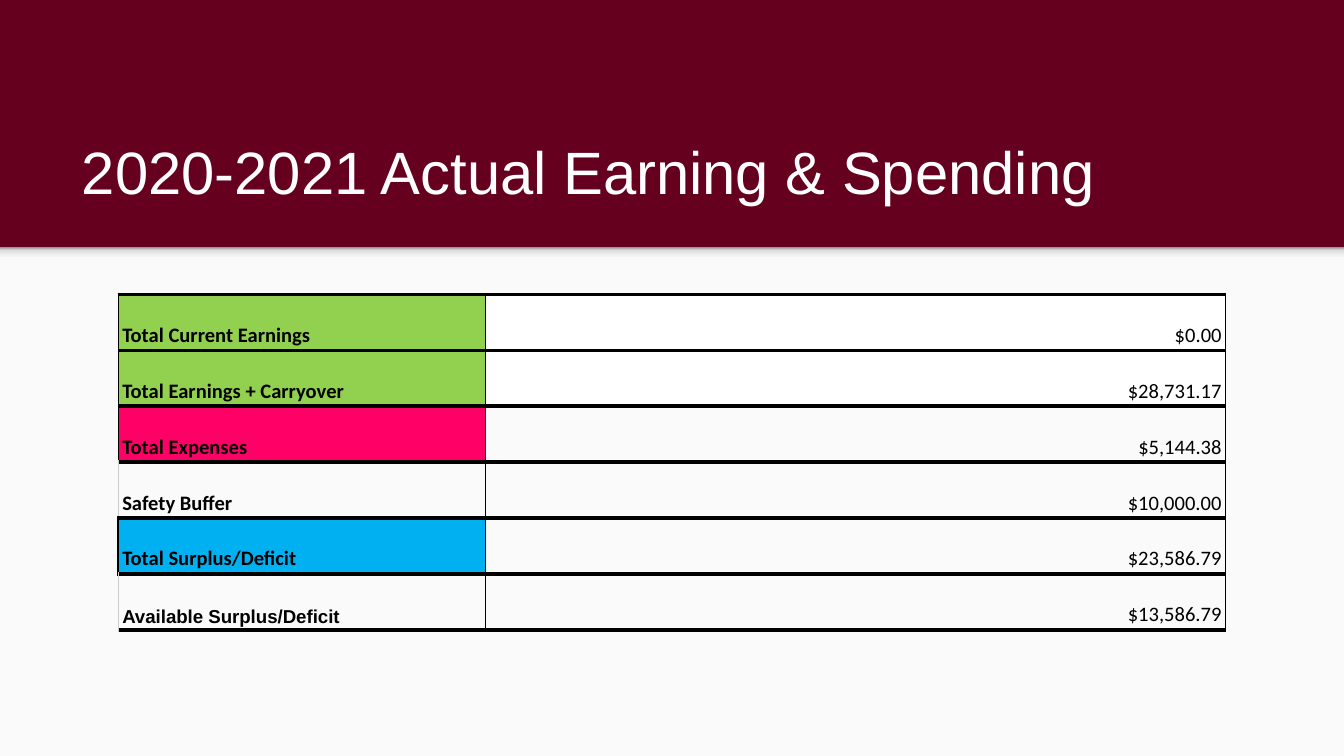
from dataclasses import dataclass

from lxml import etree
from pptx import Presentation
from pptx.dml.color import RGBColor
from pptx.enum.shapes import MSO_SHAPE
from pptx.enum.text import MSO_ANCHOR, MSO_AUTO_SIZE, PP_ALIGN
from pptx.oxml.ns import qn
from pptx.util import Inches, Pt

RECT = MSO_SHAPE.RECTANGLE
BOTTOM = MSO_ANCHOR.BOTTOM
LEFT, RIGHT = PP_ALIGN.LEFT, PP_ALIGN.RIGHT
NO_AUTOFIT = MSO_AUTO_SIZE.NONE
TITLE_ONLY = 5


@dataclass(frozen=True)
class Theme:
    maroon: str = "66001F"
    panel: str = "FAFAFA"
    white: str = "FFFFFF"
    black: str = "000000"
    grey: str = "CCCCCC"
    green: str = "92D050"
    pink: str = "FF0066"
    blue: str = "00B0F0"
    shade: tuple = ((0, "F9F9F9"), (36, "F9F9F9"), (80, "DEDEDE"), (100, "999999"))
    heading_font: str = "Arial"
    table_font: str = "Calibri"
    title_size: float = 32
    table_size: float = 11
    small_size: float = 10


THEME = Theme()
SLIDE_WIDTH = 10
SLIDE_HEIGHT = SLIDE_WIDTH * 9 / 16
PANEL_TOP = 1.84
COL_WIDTHS = (2.73, 5.51)
TABLE_HEIGHT = 2.5
THIN, MEDIUM, THICK = 0.75, 1.5, 2.25

# label, amount, label fill, amount fill, left border (colour, width)
ROWS = (
    ("Total Current Earnings", "$0.00", THEME.green, THEME.white, (THEME.black, THIN)),
    ("Total Earnings + Carryover", "$28,731.17", THEME.green, THEME.white, (THEME.black, THIN)),
    ("Total Expenses", "$5,144.38", THEME.pink, None, (THEME.black, THIN)),
    ("Safety Buffer", "$10,000.00", None, None, (THEME.grey, THIN)),
    ("Total Surplus/Deficit", "$23,586.79", THEME.blue, None, (THEME.black, MEDIUM)),
    ("Available Surplus/Deficit", "$13,586.79", None, None, (THEME.grey, THIN)),
)


def rgb(value):
    return RGBColor.from_string(value)


def paint(fill, color):
    """Fill with a colour, or clear the fill when there is none."""
    if color is None:
        fill.background()
    else:
        fill.solid()
        fill.fore_color.rgb = rgb(color)


def add_run(p, text, font, size, color, bold=False):
    r = p.add_run()
    r.text = text
    r.font.name = font
    r.font.size = Pt(size)
    r.font.bold = bold
    r.font.color.rgb = rgb(color)


def add_band(s, top, height):
    """Add a borderless rectangle across the whole slide."""
    sp = s.shapes.add_shape(RECT, 0, Inches(top), Inches(SLIDE_WIDTH), Inches(height))
    sp.shadow.inherit = False
    sp.line.fill.background()
    paint(sp.fill, THEME.panel)
    return sp


def shade_band(sp, stops):
    """Replace the fill with a gradient running from bottom to top."""
    sp.fill.gradient()
    sp.fill.gradient_angle = 90
    gs_list = sp._element.spPr.find(qn("a:gradFill")).find(qn("a:gsLst"))
    for gs in list(gs_list):
        gs_list.remove(gs)
    for position, color in stops:
        gs = etree.SubElement(gs_list, qn("a:gs"), pos=str(position * 1000))
        etree.SubElement(gs, qn("a:srgbClr"), val=color)


def set_title(s, text):
    sp = s.shapes.title
    sp.left, sp.top, sp.width, sp.height = map(Inches, (0.51, 0.8, 8.99, 0.84))
    tf = sp.text_frame
    tf.auto_size = NO_AUTOFIT
    tf.word_wrap = True
    tf.vertical_anchor = BOTTOM
    tf.margin_left = tf.margin_right = tf.margin_top = tf.margin_bottom = Inches(0.1)
    p = tf.paragraphs[0]
    p.alignment = LEFT
    add_run(p, text, THEME.heading_font, THEME.title_size, THEME.white)


def set_borders(cell, left):
    tc_pr = cell._tc.get_or_add_tcPr()
    thin, thick = (THEME.black, THIN), (THEME.black, THICK)
    for tag, (color, width) in zip(("lnL", "lnR", "lnT", "lnB"), (left, thin, thick, thick)):
        ln = etree.SubElement(tc_pr, qn(f"a:{tag}"), w=str(Pt(width)))
        fill = etree.SubElement(ln, qn("a:solidFill"))
        etree.SubElement(fill, qn("a:srgbClr"), val=color)


def fill_cell(cell, text, align, fill, left, font, size, bold):
    set_borders(cell, left)
    paint(cell.fill, fill)
    cell.vertical_anchor = BOTTOM
    cell.margin_left = cell.margin_right = Inches(0.03)
    cell.margin_top = cell.margin_bottom = Inches(0.02)
    p = cell.text_frame.paragraphs[0]
    p.alignment = align
    p.line_spacing = 1.15
    add_run(p, text, font, size, THEME.black, bold)


def add_budget_table(s):
    frame = s.shapes.add_table(len(ROWS), len(COL_WIDTHS), Inches(0.88), Inches(2.19),
                               Inches(sum(COL_WIDTHS)), Inches(TABLE_HEIGHT))
    table = frame.table
    table.first_row = table.horz_banding = False
    for column, width in zip(table.columns, COL_WIDTHS):
        column.width = Inches(width)
    body = (THEME.table_font, THEME.table_size)
    last = len(ROWS) - 1
    for i, (label, amount, label_fill, amount_fill, left) in enumerate(ROWS):
        label_type = (THEME.heading_font, THEME.small_size) if i == last else body
        fill_cell(table.cell(i, 0), label, LEFT, label_fill, left, *label_type, True)
        fill_cell(table.cell(i, 1), amount, RIGHT, amount_fill, (THEME.black, THIN), *body, False)


def main():
    prs = Presentation()
    prs.slide_width, prs.slide_height = Inches(SLIDE_WIDTH), Inches(SLIDE_HEIGHT)
    s = prs.slides.add_slide(prs.slide_layouts[TITLE_ONLY])
    paint(s.background.fill, THEME.maroon)
    add_band(s, PANEL_TOP, SLIDE_HEIGHT - PANEL_TOP)
    shade_band(add_band(s, PANEL_TOP, 0.12), THEME.shade)
    set_title(s, "2020-2021 Actual Earning & Spending")
    add_budget_table(s)
    prs.save("out.pptx")


if __name__ == "__main__":
    main()
